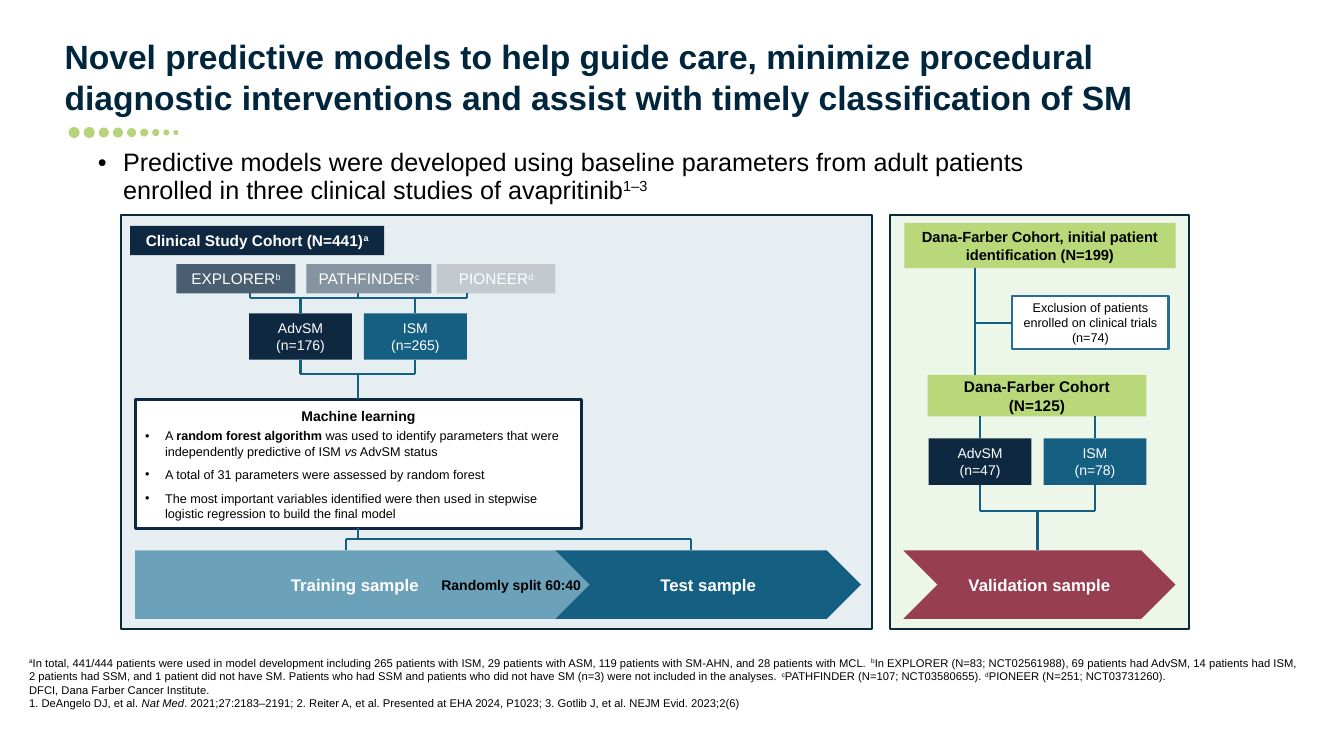
from lxml.etree import SubElement
from pptx import Presentation
from pptx.dml.color import RGBColor
from pptx.enum.shapes import MSO_CONNECTOR, MSO_SHAPE
from pptx.enum.text import MSO_ANCHOR, MSO_AUTO_SIZE, PP_ALIGN
from pptx.oxml.ns import qn
from pptx.util import Emu, Inches, Pt

FONT = "Arial"
COLORS = {
    "white": "FFFFFF", "black": "000000", "title": "00263D", "dot": "B7D37C",
    "navy": "0E2841", "teal": "156082", "frame": "092A39", "green": "4EA72E",
    "lime": "B8D87A", "steel": "6BA2B9", "wine": "983E53", "blue": "286D96",
    "slate": "4A5E71", "gray": "8693A0", "silver": "C3C9CF",
}
BULLET_INDENT = 0.2


def rgb(name):
    return RGBColor.from_string(COLORS[name])


def add_runs(paragraph, runs, size, color, bold=False):
    """Add (text, style) runs; style is "", "bold", "italic" or "super"."""
    for text, style in runs:
        for index, line in enumerate(text.split("\n")):
            if index:
                paragraph.add_line_break()
            run = paragraph.add_run()
            run.text = line
            font = run.font
            font.name, font.size = FONT, Pt(size)
            font.color.rgb = rgb(color)
            font.bold = bold or style == "bold"
            font.italic = style == "italic"
            if style == "super":
                run._r.get_or_add_rPr().set("baseline", "30000")


def add_bullet(paragraph, indent):
    properties = paragraph._p.get_or_add_pPr()
    properties.set("marL", str(Inches(indent)))
    properties.set("indent", str(-Inches(indent)))
    SubElement(properties, qn("a:buFont")).set("typeface", FONT)
    SubElement(properties, qn("a:buChar")).set("char", "•")


def set_margins(frame, left, top, right, bottom):
    frame.margin_left, frame.margin_top = Inches(left), Inches(top)
    frame.margin_right, frame.margin_bottom = Inches(right), Inches(bottom)


def add_box(slide, place, fill, kind=MSO_SHAPE.RECTANGLE, line=None, weight=1.5, opacity=None):
    shape = slide.shapes.add_shape(kind, *map(Inches, place))
    shape.shadow.inherit = False
    shape.fill.solid()
    shape.fill.fore_color.rgb = rgb(fill)
    if opacity is not None:
        color = shape._element.spPr.find(qn("a:solidFill"))[0]
        SubElement(color, qn("a:alpha")).set("val", str(opacity * 1000))
    if line:
        shape.line.color.rgb = rgb(line)
        shape.line.width = Pt(weight)
    else:
        shape.line.fill.background()
    return shape


def add_label(slide, place, fill, paragraphs, size, color="white", bold=False, **look):
    """Add a filled shape with centred text, given as a list of run lists."""
    shape = add_box(slide, place, fill, **look)
    frame = shape.text_frame
    frame.word_wrap = True
    frame.vertical_anchor = MSO_ANCHOR.MIDDLE
    for index, runs in enumerate(paragraphs):
        paragraph = frame.add_paragraph() if index else frame.paragraphs[0]
        paragraph.alignment = PP_ALIGN.CENTER
        add_runs(paragraph, runs, size, color, bold)
    return shape


def add_text(slide, place, paragraphs, size, bold=False):
    frame = slide.shapes.add_textbox(*map(Inches, place)).text_frame
    frame.word_wrap = True
    for index, runs in enumerate(paragraphs):
        paragraph = frame.add_paragraph() if index else frame.paragraphs[0]
        add_runs(paragraph, runs, size, "black", bold)
    return frame


def add_line(slide, begin, end, begin_box=None, end_box=None, end_side=0):
    connector = slide.shapes.add_connector(
        MSO_CONNECTOR.STRAIGHT, *map(Inches, (*begin, *end)))
    connector.line.color.rgb = rgb("teal")
    connector.line.width = Pt(1.5)
    SubElement(connector._element.spPr, qn("a:effectLst"))
    if begin_box is not None:
        connector.begin_connect(begin_box, 2)
    if end_box is not None:
        connector.end_connect(end_box, end_side)


def add_bracket(slide, uppers, top, bar, lowers, bottom):
    """Join uppers to lowers over a bar; each end is a box or an x position."""
    def locate(end):
        if isinstance(end, (int, float)):
            return end, None
        return Emu(end.left + end.width // 2).inches, end

    upper_ends = [locate(end) for end in uppers]
    lower_ends = [locate(end) for end in lowers]
    for x, box in upper_ends:
        add_line(slide, (x, top), (x, bar), begin_box=box)
    for x, box in lower_ends:
        add_line(slide, (x, bar), (x, bottom), end_box=box)
    positions = [x for x, _ in upper_ends + lower_ends]
    add_line(slide, (min(positions), bar), (max(positions), bar))


def add_groups(slide, left, top, advanced, indolent):
    """Add the AdvSM and ISM boxes of one cohort."""
    groups = (("AdvSM", advanced, "navy"), ("ISM", indolent, "teal"))
    return [add_label(slide, (left + 1.14 * index, top, 1.02, 0.46), fill,
                      [[(f"{name}\n(n={count})", "")]], 10)
            for index, (name, count, fill) in enumerate(groups)]


def add_heading(slide):
    title = slide.shapes.title
    title.left, title.top, title.width, title.height = map(Inches, (0.64, 0.51, 10.84, 0.73))
    frame = title.text_frame
    frame.word_wrap = True
    frame.auto_size = MSO_AUTO_SIZE.NONE
    frame.vertical_anchor = MSO_ANCHOR.BOTTOM
    set_margins(frame, 0, 0.04, 0.1, 0.08)
    frame.paragraphs[0].alignment = PP_ALIGN.LEFT
    add_runs(frame.paragraphs[0], [(
        "Novel predictive models to help guide care, minimize procedural diagnostic "
        "interventions and assist with timely classification of SM", "")], 24, "title", True)

    left = 0.68
    for size in (0.11, 0.11, 0.1, 0.1, 0.09, 0.08, 0.07, 0.06, 0.05):
        add_box(slide, (left, 1.315 - size / 2, size, size), "dot", MSO_SHAPE.OVAL)
        left += size + 0.04

    frame = add_text(slide, (0.97, 1.79, 9.78, 0.24), [[
        ("Predictive models were developed using baseline parameters from adult patients "
         "enrolled in three clinical studies of avapritinib", ""), ("1–3", "super")]], 18)
    frame.vertical_anchor = MSO_ANCHOR.BOTTOM
    set_margins(frame, 0, 0, 0, 0)
    frame.paragraphs[0].line_spacing = 0.9
    add_bullet(frame.paragraphs[0], 0.25)


def add_machine_learning(slide):
    box = add_label(slide, (1.34, 3.96, 4.43, 1.28), "white",
                    [[("Machine learning", "bold")]], 10, "black", line="navy", weight=2.25)
    frame = box.text_frame
    frame.vertical_anchor = MSO_ANCHOR.TOP
    set_margins(frame, 0.1, 0.08, 0.1, 0.05)
    frame.paragraphs[0].space_after = Pt(3)
    for runs in (
        [("A ", ""), ("random forest algorithm ", "bold"),
         ("was used to identify parameters that were independently predictive of ISM ", ""),
         ("vs", "italic"), (" AdvSM status", "")],
        [("A total of 31 parameters were assessed by random forest", "")],
        [("The most important variables identified were then used in stepwise "
          "logistic regression to build the final model", "")],
    ):
        paragraph = frame.add_paragraph()
        paragraph.alignment = PP_ALIGN.LEFT
        paragraph.space_after = Pt(6)
        add_bullet(paragraph, BULLET_INDENT)
        add_runs(paragraph, runs, 9, "black")
    return box


def add_study_cohort(slide):
    add_box(slide, (1.2, 2.13, 7.45, 4.11), "teal", line="frame", opacity=10)
    add_label(slide, (1.29, 2.24, 2.52, 0.29), "navy",
              [[("Clinical Study Cohort (N=441)", ""), ("a", "super")]], 11, bold=True)
    for left, width, study, note, fill in (
        (1.75, 1.18, "EXPLORER", "b", "slate"),
        (3.04, 1.24, "PATHFINDER", "c", "gray"),
        (4.33, 1.18, "PIONEER", "d", "silver"),
    ):
        add_label(slide, (left, 2.62, width, 0.29), fill, [[(study, ""), (note, "super")]], 11)
    groups = add_groups(slide, 2.47, 3.11, 176, 265)
    learning = add_machine_learning(slide)
    add_label(slide, (1.34, 5.46, 4.53, 0.68), "steel", [[("Training sample", "")]], 12,
              bold=True, kind=MSO_SHAPE.PENTAGON)
    add_label(slide, (5.51, 5.46, 3.03, 0.68), "teal", [[("Test sample", "")]], 12,
              bold=True, kind=MSO_SHAPE.CHEVRON)
    add_text(slide, (4.28, 5.67, 1.93, 0.27), [[("Randomly split 60:40", "")]], 10, True)
    add_bracket(slide, (2.48, 3.55, 4.63), 2.91, 2.96, groups, 3.11)
    add_bracket(slide, groups, 3.57, 3.71, [learning], 3.96)
    add_bracket(slide, [learning], 5.24, 5.35, (3.43, 6.85), 5.46)


def add_validation_cohort(slide):
    add_box(slide, (8.83, 2.13, 2.96, 4.11), "green", line="frame", opacity=10)
    add_label(slide, (8.97, 2.21, 2.69, 0.45), "lime", [[
        ("Dana-Farber Cohort, initial patient identification (N=199)", "")]], 10.5, "black", True)
    exclusion = add_label(slide, (10.04, 2.94, 1.55, 0.52), "white", [
        [("Exclusion of patients enrolled on clinical trials", "")],
        [("(n=74)", "")]], 9, "black", line="blue")
    add_label(slide, (9.2, 3.72, 2.17, 0.41), "lime",
              [[("Dana-Farber Cohort (N=125)", "")]], 11, "black", True)
    groups = add_groups(slide, 9.21, 4.35, 47, 78)
    add_label(slide, (8.96, 5.46, 2.7, 0.68), "wine", [[("Validation sample", "")]], 12,
              bold=True, kind=MSO_SHAPE.CHEVRON)
    add_line(slide, (9.67, 2.66), (9.67, 3.72))
    add_line(slide, (9.67, 3.2), (10.04, 3.2), end_box=exclusion, end_side=1)
    for x, group in zip((9.72, 10.86), groups):
        add_line(slide, (x, 4.13), (x, 4.35), end_box=group)
    add_bracket(slide, groups, 4.81, 5.07, [10.29], 5.46)


def add_footnotes(slide):
    add_text(slide, (0.19, 6.46, 13.1, 0.64), [
        [("a", "super"),
         ("In total, 441/444 patients were used in model development including 265 patients with "
          "ISM, 29 patients with ASM, 119 patients with SM-AHN, and 28 patients with MCL. ", ""),
         ("b", "super"),
         ("In EXPLORER (N=83; NCT02561988), 69 patients had AdvSM, 14 patients had ISM, \n"
          "2 patients had SSM, and 1 patient did not have SM. Patients who had SSM and patients "
          "who did not have SM (n=3) were not included in the analyses. ", ""),
         ("c", "super"), ("PATHFINDER (N=107; NCT03580655). ", ""),
         ("d", "super"), ("PIONEER (N=251; NCT03731260).", "")],
        [("DFCI, Dana Farber Cancer Institute.", "")],
        [("1. DeAngelo DJ, et al. ", ""), ("Nat Med", "italic"),
         (". 2021;27:2183–2191; 2. Reiter A, et al. Presented at EHA 2024, P1023; "
          "3. Gotlib J, et al. NEJM Evid. 2023;2(6)", "")],
    ], 8)


def main():
    presentation = Presentation()
    presentation.slide_width, presentation.slide_height = Inches(13.33), Inches(7.5)
    slide = presentation.slides.add_slide(presentation.slide_layouts[5])
    add_heading(slide)
    add_study_cohort(slide)
    add_validation_cohort(slide)
    add_footnotes(slide)
    presentation.save("out.pptx")


if __name__ == "__main__":
    main()
